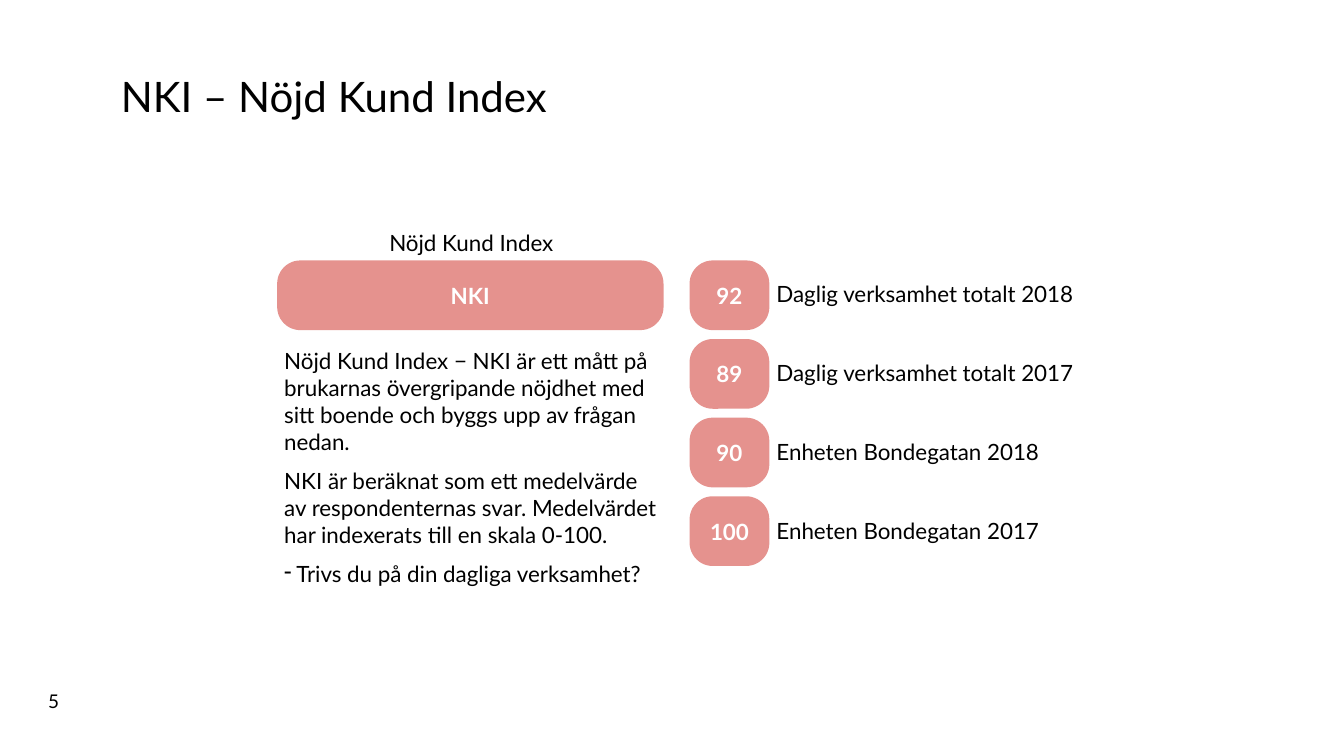
from pptx import Presentation
from pptx.dml.color import RGBColor
from pptx.enum.shapes import MSO_SHAPE
from pptx.enum.text import MSO_ANCHOR, PP_ALIGN
from pptx.util import Inches, Pt
from lxml import etree

ROUND = MSO_SHAPE.ROUNDED_RECTANGLE
TOP, MID, LOW = MSO_ANCHOR.TOP, MSO_ANCHOR.MIDDLE, MSO_ANCHOR.BOTTOM
LEFT, MIDST = PP_ALIGN.LEFT, PP_ALIGN.CENTER
COLS, ROWS = 160, 90
INK = {"text": "000000", "pill": "E5928E", "light": "FFFFFF"}
FONT = "Lato"
BODY = 16
GAP = 9
LINE = BODY * 1.2
WIDE = (0.1, 0.05, 0.1, 0.05)
SLIM = (0.07, 0.05, 0.05, 0.04)


class Page:
    def __init__(self, deck):
        self.slide = deck.slides.add_slide(deck.slide_layouts[6])
        self.col = deck.slide_width / COLS
        self.row = deck.slide_height / ROWS

    def place(self, x, y, w, h):
        return [round(n) for n in (x * self.col, y * self.row, w * self.col, h * self.row)]

    def style(self, par, size, ink, bold=False, align=LEFT):
        par.alignment = align
        for run in par.runs:
            run.font.name = FONT
            run.font.size = Pt(size)
            run.font.bold = bold
            run.font.color.rgb = RGBColor.from_string(INK[ink])

    def text(self, spot, lines, size=BODY, gaps=(), inset=SLIM, anchor=TOP):
        frame = self.slide.shapes.add_textbox(*self.place(*spot)).text_frame
        frame.word_wrap = True
        frame.vertical_anchor = anchor
        (frame.margin_left, frame.margin_top,
         frame.margin_right, frame.margin_bottom) = [Inches(n) for n in inset]
        frame.text = "\n".join(lines)
        for par in frame.paragraphs:
            self.style(par, size, "text")
        for par, gap in zip(frame.paragraphs[1:], gaps):
            par.space_before = Pt(gap)
        return frame.paragraphs

    def dash(self, par):
        props = par._p.get_or_add_pPr()
        props.set("marL", str(Inches(0.12)))
        props.set("indent", str(-Inches(0.12)))
        space = props.nsmap["a"]
        etree.SubElement(props, f"{{{space}}}buChar").set("char", "-")

    def pill(self, spot, label):
        shape = self.slide.shapes.add_shape(ROUND, *self.place(*spot))
        shape.adjustments[0] = 0.333
        shape.shadow.inherit = False
        shape.fill.solid()
        shape.fill.fore_color.rgb = RGBColor.from_string(INK["pill"])
        shape.line.fill.background()
        frame = shape.text_frame
        frame.vertical_anchor = MID
        frame.text = label
        self.style(frame.paragraphs[0], BODY, "light", True, MIDST)


def main():
    deck = Presentation()
    deck.slide_width, deck.slide_height = Inches(13.33), Inches(7.5)
    page = Page(deck)

    page.text((4.56, 81.5, 5.2, 4), ["5"], 13.5, inset=WIDE)
    title = page.text((13.2, 7.56, 136.6, 7.56), ["NKI – Nöjd Kund Index"], 30,
                      inset=WIDE, anchor=LOW)
    title[0].line_spacing = 0.9

    about = [
        "Nöjd Kund Index",
        "Nöjd Kund Index − NKI är ett mått på brukarnas övergripande nöjdhet med "
        "sitt boende och byggs upp av frågan nedan.",
        "NKI är beräknat som ett medelvärde av respondenternas svar. Medelvärdet "
        "har indexerats till en skala 0-100.",
        "Trivs du på din dagliga verksamhet?",
    ]
    pars = page.text((33, 26.64, 46, 48.5), about, gaps=(3 * GAP + 2 * LINE, GAP, GAP))
    pars[0].alignment = MIDST
    page.dash(pars[-1])

    high, top, step = 8.3, 31, 9.36
    page.pill((33, top, 46, high), "NKI")
    scores = [
        ("92", "Daglig verksamhet totalt 2018"),
        ("89", "Daglig verksamhet totalt 2017"),
        ("90", "Enheten Bondegatan 2018"),
        ("100", "Enheten Bondegatan 2017"),
    ]
    for i, (score, _) in enumerate(scores):
        page.pill((82.1, top + i * step, 9.5, high), score)
    page.text((91.6, 32.76, 50.3, 34.6), [name for _, name in scores],
              gaps=[2 * GAP + LINE] * 3)

    deck.save("out.pptx")


if __name__ == "__main__":
    main()
